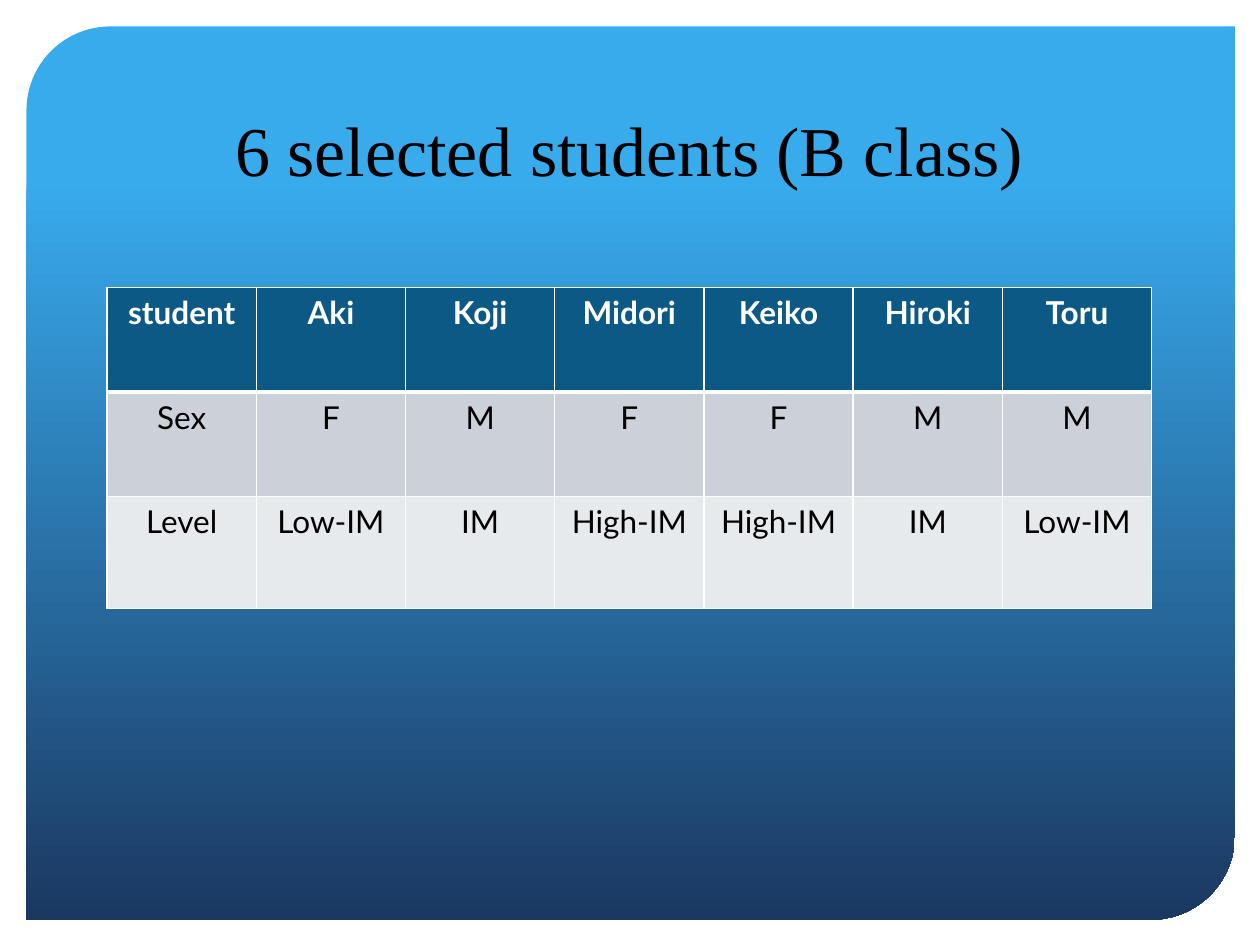
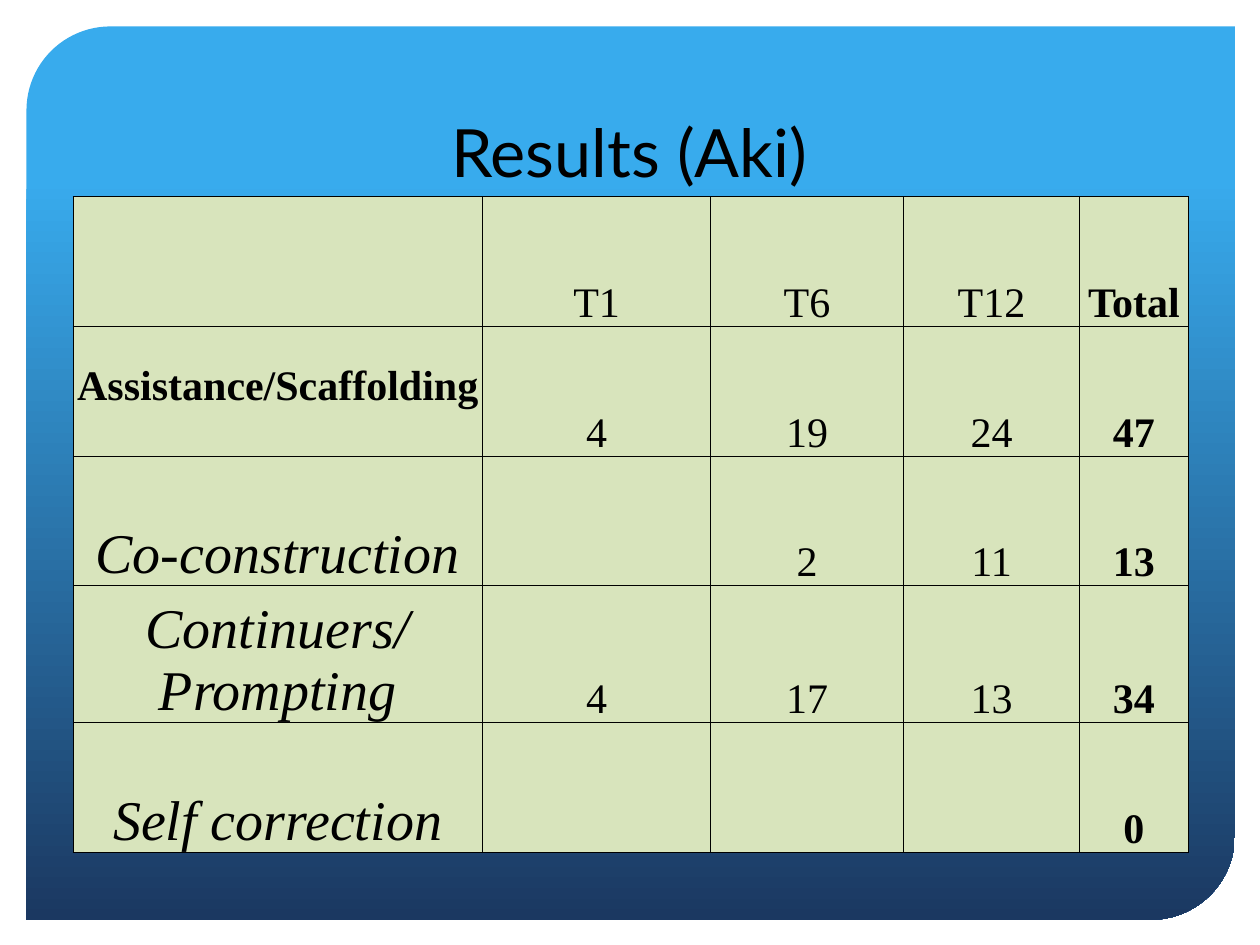
from lxml import etree
from pptx import Presentation
from pptx import util as u
from pptx.dml.color import RGBColor
from pptx.enum import shapes, text
from pptx.oxml import ns

SANS, SERIF = "Lato", "Times New Roman"
BLACK, WHITE = "000000", "FFFFFF"
PANEL_STOPS = [(0.17, "38ABED"), (1, "1B3861")]
HEADER_BLUE, ROW_FILLS = "0C5986", ["CCD1D9", "E7EAED"]
RESULT_GREEN = "D8E4BC"
TITLE_PLACE = (0.85, 0.42, 8.29, 1.14)

STUDENTS = [
    ["student", "Aki", "Koji", "Midori", "Keiko", "Hiroki", "Toru"],
    ["Sex", "F", "M", "F", "F", "M", "M"],
    ["Level", "Low-IM", "IM", "High-IM", "High-IM", "IM", "Low-IM"],
]
RESULTS = [
    ["", "T1", "T6", "T12", "Total"],
    ["Assistance/Scaffolding", "4", "19", "24", "47"],
    ["Co-construction", "", "2", "11", "13"],
    ["Continuers/Prompting", "4", "17", "13", "34"],
    ["Self correction", "", "", "", "0"],
]


def color(value):
    return RGBColor.from_string(value)


def lengths(values):
    return [u.Inches(value) for value in values]


def write(frame, words, **style):
    para = frame.paragraphs[0]
    para.alignment = text.PP_ALIGN.CENTER
    if not words:
        return
    span = para.add_run()
    span.text = words
    span.font.color.rgb = color(style.pop("color", BLACK))
    span.font.size = u.Pt(style.pop("size"))
    for name, value in style.items():
        setattr(span.font, name, value)


def add_panel(page):
    panel = page.shapes.add_shape(
        shapes.MSO_SHAPE.ROUND_2_DIAG_RECTANGLE, *lengths((0.21, 0.21, 9.59, 7.09)))
    panel.shadow.inherit = False
    panel.adjustments[0] = 0.094
    panel.adjustments[1] = 0
    panel.line.fill.background()
    panel.fill.gradient()
    panel.fill.gradient_angle = 270
    for stop, (position, value) in zip(panel.fill.gradient_stops, PANEL_STOPS):
        stop.position = position
        stop.color.rgb = color(value)


def add_title(page, words, font, size):
    frame = page.shapes.add_textbox(*lengths(TITLE_PLACE)).text_frame
    frame.word_wrap = True
    frame.vertical_anchor = text.MSO_ANCHOR.BOTTOM
    write(frame, words, name=font, size=size)


def add_page(deck, title, font, size):
    page = deck.slides.add_slide(deck.slide_layouts[6])
    add_panel(page)
    add_title(page, title, font, size)
    return page


def add_grid(page, left, top, widths, heights):
    place = lengths((left, top, sum(widths), sum(heights)))
    grid = page.shapes.add_table(len(heights), len(widths), *place).table
    grid.first_row = grid.horz_banding = False
    for column, width in zip(grid.columns, widths):
        column.width = u.Inches(width)
    for row, height in zip(grid.rows, heights):
        row.height = u.Inches(height)
    return grid


def paint_cell(cell, fill, border, **edges):
    props = cell._tc.get_or_add_tcPr()
    for edge in "LRTB":
        line = etree.SubElement(props, ns.qn(f"a:ln{edge}"), w=str(u.Pt(edges[edge])))
        solid = etree.SubElement(line, ns.qn("a:solidFill"))
        etree.SubElement(solid, ns.qn("a:srgbClr"), val=border)
    cell.fill.solid()
    cell.fill.fore_color.rgb = color(fill)


def add_students(page):
    count = len(STUDENTS[0])
    grid = add_grid(page, 0.85, 2.28, [8.29 / count] * count, [0.83, 0.83, 0.89])
    for r, row in enumerate(STUDENTS):
        header = r == 0
        fill = HEADER_BLUE if header else ROW_FILLS[r - 1]
        for c, words in enumerate(row):
            cell = grid.cell(r, c)
            paint_cell(cell, fill, WHITE, L=1, R=1,
                       T=3 if r == 1 else 1, B=3 if header else 1)
            write(cell.text_frame, words, name=SANS, size=18, bold=header,
                  color=WHITE if header else BLACK)


def add_results(page):
    grid = add_grid(page, 0.58, 1.56, [3.25, 1.81, 1.53, 1.4, 0.86], [1.03] * 5)
    insets = {"margin_left": 0.01, "margin_top": 0.02,
              "margin_right": 0.01, "margin_bottom": 0}
    for r, row in enumerate(RESULTS):
        for c, words in enumerate(row):
            cell = grid.cell(r, c)
            group_label = (r, c) == (1, 0)
            sub_label = c == 0 and r > 1
            for name, value in insets.items():
                setattr(cell, name, u.Inches(value))
            if group_label:
                cell.margin_bottom = u.Inches(0.37)
            cell.vertical_anchor = text.MSO_ANCHOR.BOTTOM
            paint_cell(cell, RESULT_GREEN, BLACK, L=0.5, R=0.5, T=0.5, B=0.5)
            write(cell.text_frame, words, name=SERIF, size=32 if sub_label else 24,
                  bold=group_label or c == len(row) - 1, italic=sub_label)


def main():
    deck = Presentation()
    deck.slide_width, deck.slide_height = lengths((10, 7.5))
    add_students(add_page(deck, "6 selected students (B class)", SERIF, 40))
    add_results(add_page(deck, "Results (Aki)", SANS, 38))
    deck.save("out.pptx")


if __name__ == "__main__":
    main()
